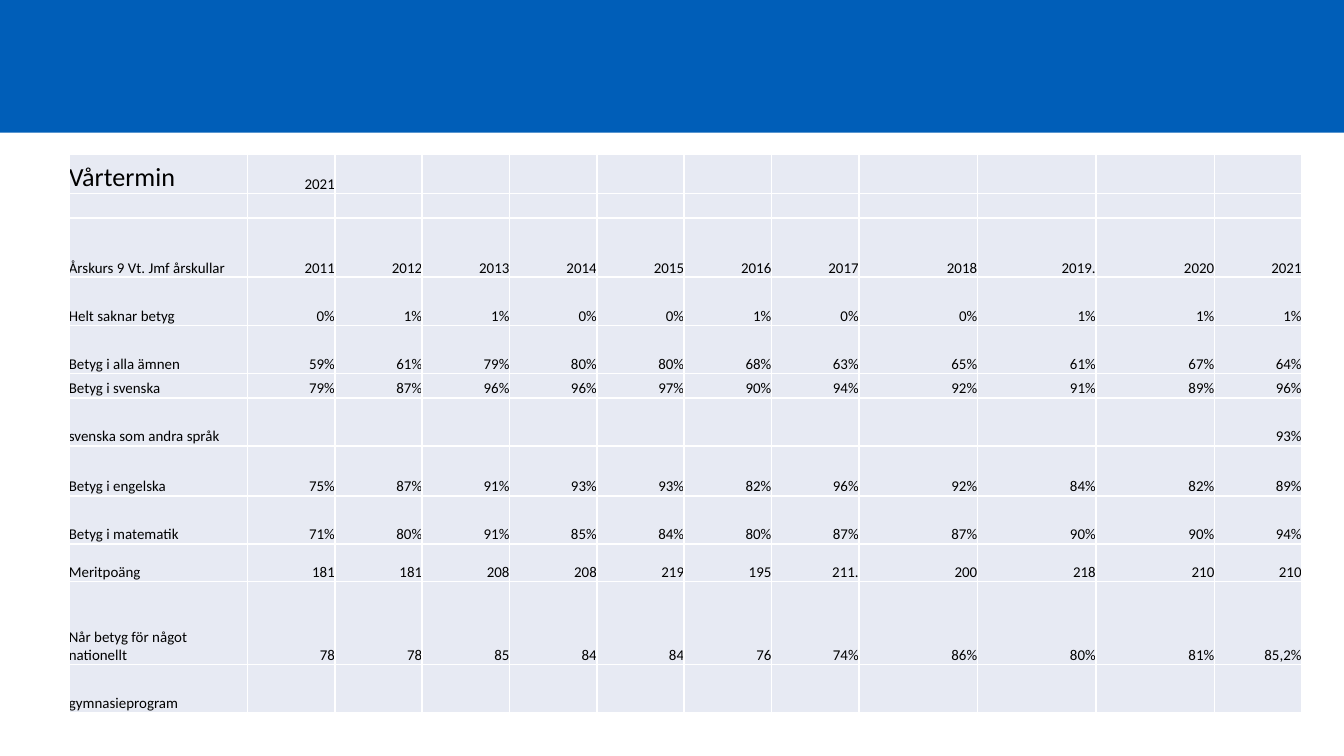
from lxml import etree
from pptx import Presentation
from pptx.dml.color import RGBColor
from pptx.enum.shapes import MSO_SHAPE
from pptx.enum.text import MSO_ANCHOR, PP_ALIGN
from pptx.oxml.ns import qn
from pptx.util import Cm, Pt

RECT = MSO_SHAPE.RECTANGLE
LEFT, RIGHT = PP_ALIGN.LEFT, PP_ALIGN.RIGHT
BLUE, PALE, WHITE, BLACK = "005EB8", "E7EAF3", "FFFFFF", "000000"
HEAD, BODY = 14, 8
CELL = {
    "margin_left": 0, "margin_right": 0, "margin_top": 0, "margin_bottom": 0,
    "vertical_anchor": MSO_ANCHOR.BOTTOM,
}
WIDTHS = [3.38] + [1.65] * 7 + [2.24] * 3 + [1.65]
ROWS = [
    (0.74, "Vårtermin", ["2021"]),
    (0.46, "", []),
    (1.12, "Årskurs 9 Vt. Jmf årskullar",
     "2011 2012 2013 2014 2015 2016 2017 2018 2019. 2020 2021".split()),
    (0.91, "Helt saknar betyg", "0% 1% 1% 0% 0% 1% 0% 0% 1% 1% 1%".split()),
    (0.91, "Betyg i alla ämnen",
     "59% 61% 79% 80% 80% 68% 63% 65% 61% 67% 64%".split()),
    (0.46, "Betyg i svenska",
     "79% 87% 96% 96% 97% 90% 94% 92% 91% 89% 96%".split()),
    (0.91, "svenska som andra språk", [""] * 10 + ["93%"]),
    (0.94, "Betyg i engelska",
     "75% 87% 91% 93% 93% 82% 96% 92% 84% 82% 89%".split()),
    (0.91, "Betyg i matematik",
     "71% 80% 91% 85% 84% 80% 87% 87% 90% 90% 94%".split()),
    (0.71, "Meritpoäng",
     "181 181 208 208 219 195 211. 200 218 210 210".split()),
    (1.57, "Når betyg för något nationellt",
     "78 78 85 84 84 76 74% 86% 80% 81% 85,2%".split()),
    (0.91, "gymnasieprogram", []),
]


def paint(fill, tint):
    """Give a fill one solid colour."""
    fill.solid()
    fill.fore_color.rgb = RGBColor.from_string(tint)


def add_band(slide, width):
    """Draw the plain blue band along the top."""
    band = slide.shapes.add_shape(RECT, 0, 0, width, Cm(2.51))
    band.shadow.inherit = False
    paint(band.fill, BLUE)
    band.line.fill.background()


def add_edges(cell):
    """Draw a thin white line on each side of a cell."""
    props = cell._tc.get_or_add_tcPr()
    for side in ("a:lnL", "a:lnR", "a:lnT", "a:lnB"):
        line = etree.SubElement(props, qn(side), w=str(Pt(1)))
        fill = etree.SubElement(line, qn("a:solidFill"))
        etree.SubElement(fill, qn("a:srgbClr"), val=WHITE)


def write(cell, text, size, align):
    """Put one line of text in a cell, or keep an empty one small."""
    para = cell.text_frame.paragraphs[0]
    para.alignment = align
    if not text:
        etree.SubElement(para._p, qn("a:endParaRPr"), sz=str(size * 100))
        return
    run = para.add_run()
    run.text = text
    for key, value in {"name": "Calibri", "size": Pt(size)}.items():
        setattr(run.font, key, value)
    run.font.color.rgb = RGBColor.from_string(BLACK)


def style(cell):
    """Set the margins, anchor, edges and fill of a cell."""
    for key, value in CELL.items():
        setattr(cell, key, value)
    add_edges(cell)
    paint(cell.fill, PALE)


def add_grades(slide):
    """Build the table of grades by year."""
    tall = sum(row[0] for row in ROWS)
    table = slide.shapes.add_table(
        len(ROWS), len(WIDTHS), Cm(1.3), Cm(2.92), Cm(sum(WIDTHS)), Cm(tall)
    ).table
    table.first_row = table.horz_banding = False
    for col, width in zip(table.columns, WIDTHS):
        col.width = Cm(width)
    for r, (height, label, marks) in enumerate(ROWS):
        table.rows[r].height = Cm(height)
        texts = [label] + marks + [""] * (len(WIDTHS) - 1 - len(marks))
        for c, text in enumerate(texts):
            cell = table.cell(r, c)
            style(cell)
            size = HEAD if r == c == 0 else BODY
            write(cell, text, size, RIGHT if c else LEFT)


def main():
    """Build the slide and save it."""
    prs = Presentation()
    prs.slide_width, prs.slide_height = Cm(25.4), Cm(14.29)
    slide = prs.slides.add_slide(prs.slide_layouts[6])
    add_band(slide, prs.slide_width)
    add_grades(slide)
    prs.save("out.pptx")


if __name__ == "__main__":
    main()
